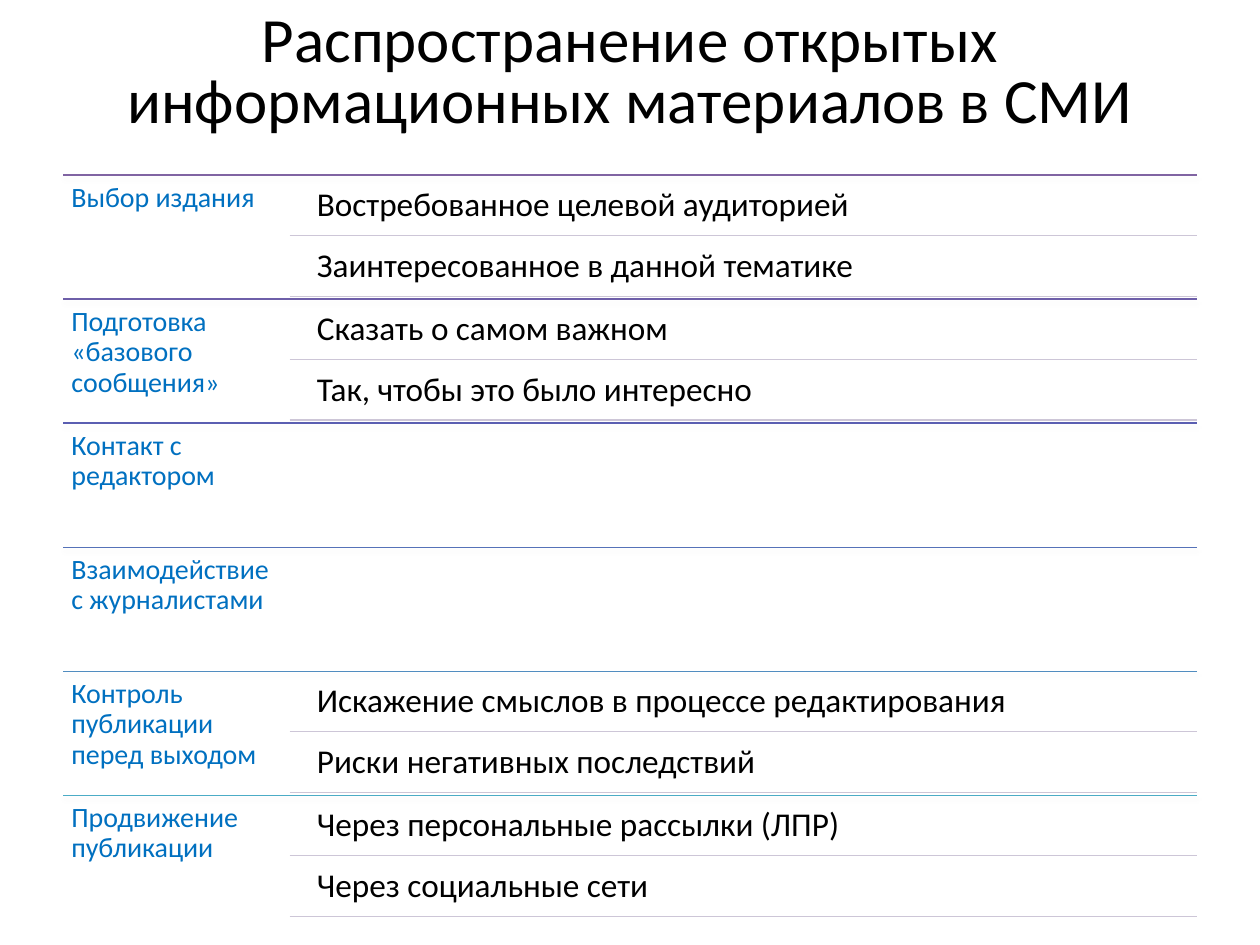
"""Build a slide listing the stages of distributing open materials to the media."""
from dataclasses import dataclass

from lxml.etree import SubElement
from pptx import Presentation
from pptx.dml.color import RGBColor
from pptx.enum.shapes import MSO_CONNECTOR as Connector
from pptx.enum.text import MSO_ANCHOR as Anchor, MSO_AUTO_SIZE as AutoSize, PP_ALIGN as Align
from pptx.oxml.ns import qn
from pptx.shapes.shapetree import GroupShapes
from pptx.text.text import TextFrame
from pptx.util import Cm, Pt

FONT = "Calibri"
TITLE = "Распространение открытых информационных материалов в СМИ"
BLACK, LABEL_COLOR, DETAIL_LINE = "000000", "0070C0", "CDC6D7"
LEFT, RIGHT, TOP = 1.27, 24.13, 3.53
STAGE_HEIGHT, LABEL_WIDTH = 2.5, 4.57
DETAIL_LEFT, DETAIL_WIDTH, DETAIL_HEIGHT = 6.19, 17.95, 1.16
DETAIL_STEP, DETAIL_GAP = 1.22, 0.06


@dataclass
class Stage:
    label: str
    color: str
    details: tuple[str, ...] = ()


STAGES = [
    Stage("Выбор издания", "8064A2",
          ("Востребованное целевой аудиторией", "Заинтересованное в данной тематике")),
    Stage("Подготовка «базового сообщения»", "6E5FA9",
          ("Сказать о самом важном", "Так, чтобы это было интересно")),
    Stage("Контакт с редактором", "5A5EB1"),
    Stage("Взаимодействие с журналистами", "5572B8"),
    Stage("Контроль публикации перед выходом", "508CBF",
          ("Искажение смыслов в процессе редактирования", "Риски негативных последствий")),
    Stage("Продвижение публикации", "4BACC6",
          ("Через персональные рассылки (ЛПР)", "Через социальные сети")),
]


def rgb(color: str) -> RGBColor:
    return RGBColor.from_string(color)


def write(frame: TextFrame, text: str, size: float, color: str,
          spacing: float, align: Align = Align.LEFT) -> None:
    frame.word_wrap = True
    frame.auto_size = AutoSize.NONE
    paragraph = frame.paragraphs[0]
    paragraph.alignment = align
    paragraph.line_spacing = spacing
    run = paragraph.add_run()
    run.text = text
    run.font.name = FONT
    run.font.size = Pt(size)
    run.font.color.rgb = rgb(color)


def add_text(shapes: GroupShapes, left: float, top: float, width: float, height: float,
             inset: float, text: str, size: float, color: str) -> None:
    frame = shapes.add_textbox(Cm(left), Cm(top), Cm(width), Cm(height)).text_frame
    frame.margin_left = frame.margin_right = Cm(inset)
    frame.margin_top = frame.margin_bottom = Cm(inset)
    write(frame, text, size, color, 0.9)


def add_rule(shapes: GroupShapes, left: float, top: float, color: str) -> None:
    rule = shapes.add_connector(Connector.STRAIGHT, Cm(left), Cm(top), Cm(RIGHT), Cm(top))
    rule.line.color.rgb = rgb(color)
    rule.line.width = Pt(0.75)
    effects = SubElement(rule._element.spPr, qn("a:effectLst"))
    shadow = SubElement(effects, qn("a:outerShdw"), blurRad=str(Pt(3.1)),
                        dist=str(Pt(1.6)), dir="5400000", rotWithShape="0")
    shade = SubElement(shadow, qn("a:srgbClr"), val=BLACK)
    SubElement(shade, qn("a:alpha"), val="38000")


def add_stage(shapes: GroupShapes, stage: Stage, top: float) -> None:
    add_rule(shapes, LEFT, top, stage.color)
    add_text(shapes, LEFT, top, LABEL_WIDTH, STAGE_HEIGHT, 0.17, stage.label, 16, LABEL_COLOR)
    for index, detail in enumerate(stage.details):
        detail_top = top + index * DETAIL_STEP
        add_text(shapes, DETAIL_LEFT, detail_top + DETAIL_GAP, DETAIL_WIDTH, DETAIL_HEIGHT,
                 0.2, detail, 19, BLACK)
        add_rule(shapes, LEFT + LABEL_WIDTH, detail_top + DETAIL_STEP, DETAIL_LINE)


def main() -> None:
    presentation = Presentation()
    presentation.slide_width, presentation.slide_height = Cm(25.4), Cm(19.05)
    slide = presentation.slides.add_slide(presentation.slide_layouts[5])
    title = slide.shapes.title
    title.left, title.top, title.width, title.height = Cm(LEFT), Cm(-0.08), Cm(22.86), Cm(3.18)
    title.text_frame.vertical_anchor = Anchor.MIDDLE
    write(title.text_frame, TITLE, 36, BLACK, 0.8, Align.CENTER)
    stage_list = slide.shapes.add_group_shape()
    for index, stage in enumerate(STAGES):
        add_stage(stage_list.shapes, stage, TOP + index * STAGE_HEIGHT)
    presentation.save("out.pptx")


if __name__ == "__main__":
    main()
